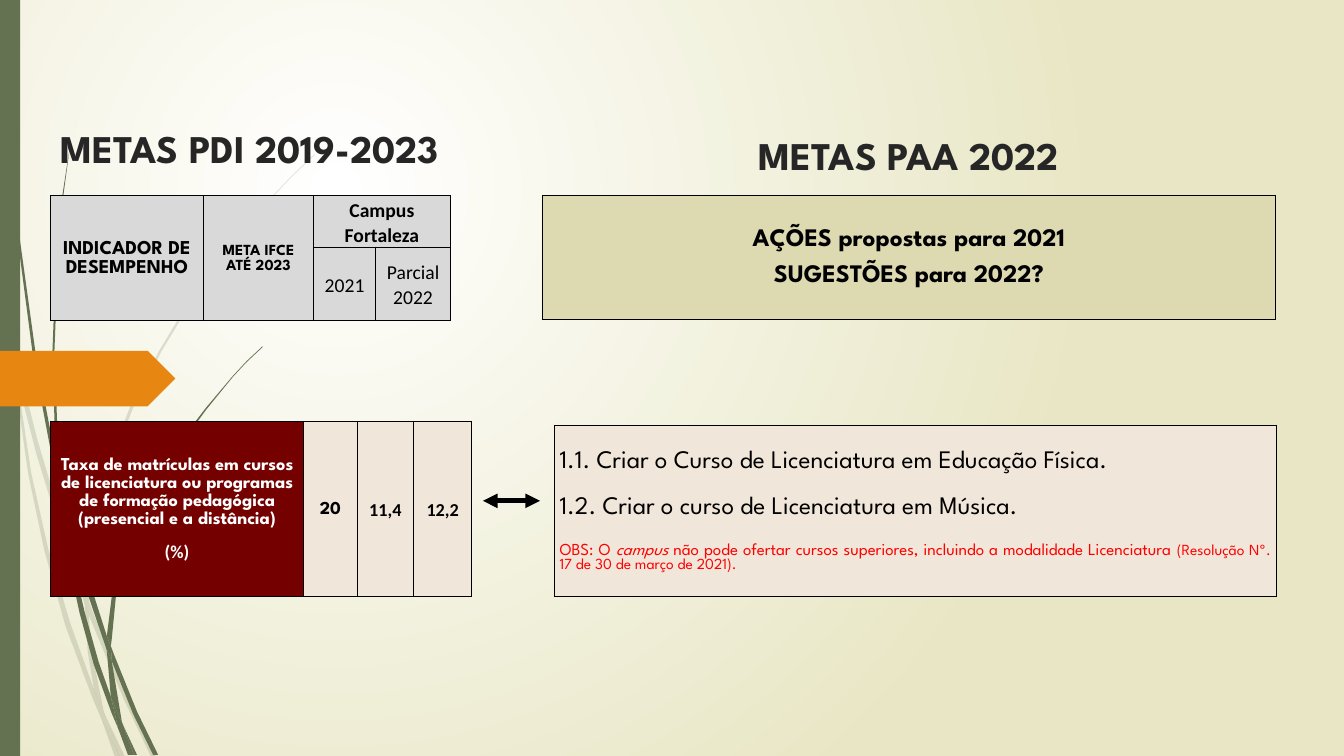
from dataclasses import dataclass

from lxml import etree
from pptx import Presentation
from pptx.dml.color import RGBColor
from pptx.enum.shapes import MSO_CONNECTOR, MSO_SHAPE
from pptx.enum.text import MSO_ANCHOR, PP_ALIGN
from pptx.oxml.ns import qn
from pptx.util import Cm, Pt

MID, LOW = MSO_ANCHOR.MIDDLE, MSO_ANCHOR.BOTTOM
CENTER, JUST = PP_ALIGN.CENTER, PP_ALIGN.JUSTIFY
RECT, ARROW = MSO_SHAPE.RECTANGLE, MSO_SHAPE.PENTAGON
STRAIGHT = MSO_CONNECTOR.STRAIGHT

WHITE = RGBColor(0xFF, 0xFF, 0xFF)
BLACK = RGBColor(0, 0, 0)
CREAM = RGBColor(0xE8, 0xE6, 0xC4)
GREEN = RGBColor(0x64, 0x72, 0x52)
ORANGE = RGBColor(0xE7, 0x87, 0x12)
DARK = RGBColor(0x26, 0x26, 0x26)
KHAKI = RGBColor(0xDD, 0xD9, 0xB0)
GRAY = RGBColor(0xD9, 0xD9, 0xD9)
WINE = RGBColor(0x74, 0, 0)
SAND = RGBColor(0xF0, 0xE7, 0xDA)
RED = RGBColor(0xFF, 0, 0)
SPARTAN, PLAIN = "League Spartan", "Calibri"


@dataclass
class Run:
    text: str
    size: float | None = None
    slant: bool | None = None


@dataclass
class Para:
    runs: list[Run]
    size: float
    font: str = SPARTAN
    bold: bool = True
    color: RGBColor = BLACK
    align: PP_ALIGN = CENTER
    pitch: float = 1.07
    after: float = 0


@dataclass
class Box:
    row: int
    col: int
    fill: RGBColor
    paras: list[Para]
    rows: int = 1
    cols: int = 1


@dataclass
class Grid:
    left: float
    top: float
    cols: list[float]
    rows: list[float]
    boxes: list[Box]


@dataclass
class Title:
    text: str
    left: float
    top: float
    width: float
    height: float
    anchor: MSO_ANCHOR


def line(text: str, size: float, **look) -> Para:
    return Para([Run(text)], size, **look)


# Grass blades: outline points in hundredths of an inch
PALE = [
    [(11, 350), (9, 322), (0, 282), (0, 299), (10, 344)],
    [(58, 522), (84, 599), (85, 586), (62, 520), (37, 436), (14, 345), (17, 376), (36, 450)],
    [(92, 607), (88, 596), (88, 610), (123, 694), (150, 751), (155, 751), (127, 692)],
    [(119, 751), (124, 751), (105, 711)],
    [(93, 683), (70, 619), (48, 545), (31, 469), (17, 376), (11, 350), (28, 470), (44, 546),
     (65, 621), (92, 693), (101, 714), (99, 707)],
    [(84, 599), (87, 646), (93, 683), (96, 692), (105, 711), (103, 706), (91, 646),
     (88, 610), (88, 608)],
    [(88, 584), (94, 522), (110, 462), (132, 405), (160, 349), (192, 296), (229, 245), (268, 198),
     (290, 175), (312, 154), (312, 153), (289, 175), (268, 197), (228, 244), (190, 295),
     (158, 348), (129, 404), (107, 461), (91, 522), (85, 584), (85, 586), (88, 596)],
    [(101, 714), (114, 751), (119, 751)],
    [(88, 608), (88, 610), (88, 596), (85, 586), (84, 599)],
    [(96, 692), (93, 683), (99, 707), (101, 714), (119, 751), (105, 711)],
]
DEEP = [
    [(7, 110), (17, 233), (33, 355), (56, 477), (57, 481), (55, 457), (55, 453), (36, 355),
     (19, 232), (8, 109), (5, 48), (4, 0), (3, 0), (4, 48)],
    [(88, 592), (106, 645), (106, 633), (106, 631), (93, 590), (75, 532), (60, 472), (64, 505),
     (75, 549)],
    [(113, 649), (110, 641), (111, 656), (132, 708), (152, 749), (157, 749), (136, 706)],
    [(110, 691), (98, 657), (84, 607), (72, 556), (64, 505), (57, 477), (68, 557), (79, 608),
     (93, 659), (111, 708), (117, 722), (116, 717)],
    [(60, 472), (58, 453), (54, 349), (58, 245), (63, 193), (70, 141), (62, 193), (56, 245),
     (52, 349), (55, 449)],
    [(133, 749), (136, 749), (122, 719)],
    [(57, 477), (64, 505), (60, 472), (55, 449), (55, 453)],
    [(111, 633), (115, 592), (125, 552), (140, 513), (158, 476), (180, 440), (205, 406), (231, 374),
     (245, 359), (261, 344), (260, 344), (245, 358), (231, 373), (204, 405), (178, 439),
     (156, 474), (137, 512), (122, 551), (111, 591), (106, 631), (110, 641)],
    [(117, 722), (127, 749), (131, 749)],
    [(106, 645), (110, 691), (116, 706), (122, 719), (121, 716), (111, 656), (109, 651)],
    [(106, 645), (109, 651), (111, 656), (110, 641), (106, 631), (106, 633)],
    [(116, 706), (110, 691), (116, 717), (117, 722), (130, 749), (133, 749), (122, 719)],
]

TITLES = [
    Title("METAS PDI 2019-2023", -0.69, 2.46, 13.97, 2.51, MID),
    Title("METAS PAA 2022", 16.28, 2.84, 13.26, 1.78, LOW),
]

GRIDS = [
    Grid(13.67, 4.93, [18.47], [3.12], [
        Box(0, 0, KHAKI, [line("AÇÕES propostas para 2021", 18, after=8),
                          line("SUGESTÕES para 2022?", 18, after=8)])]),
    Grid(1.27, 4.93, [3.86, 2.77, 1.57, 1.88], [1.24, 1.85], [
        Box(0, 0, GRAY, [line("INDICADOR DE DESEMPENHO", 14, after=8)], rows=2),
        Box(0, 1, GRAY, [line("META IFCE", 11), line("ATÉ 2023", 11)], rows=2),
        Box(0, 2, GRAY, [line("Campus Fortaleza", 14, font=PLAIN)], cols=2),
        Box(1, 2, GRAY, [line("2021", 14, font=PLAIN, bold=False)]),
        Box(1, 3, GRAY, [line("Parcial 2022", 14, font=PLAIN, bold=False)])]),
    Grid(1.27, 10.62, [6.38, 1.35, 1.42, 1.47], [4.42], [
        Box(0, 0, WINE, [
            line("Taxa de matrículas em cursos de licenciatura ou programas de formação "
                 "pedagógica (presencial e a distância)", 13, color=WHITE, after=8),
            line("(%)", 13, font=PLAIN, color=WHITE, after=8)]),
        Box(0, 1, SAND, [line("20", 13, after=8)]),
        Box(0, 2, SAND, [line("11,4", 13, font=PLAIN, after=8)]),
        Box(0, 3, SAND, [line("12,2", 13, font=PLAIN, after=8)])]),
    Grid(13.97, 10.72, [18.19], [4.32], [
        Box(0, 0, SAND, [
            *(line(text, 18, bold=False, align=JUST, pitch=1, after=16.5) for text in (
                "1.1. Criar o Curso de Licenciatura em Educação Física.",
                "1.2. Criar o curso de Licenciatura em Música.")),
            Para([Run("OBS: O "), Run("campus", slant=True),
                  Run(" não pode ofertar cursos superiores, incluindo a modalidade Licenciatura "),
                  Run("(Resolução Nº. 17 de 30 de março de 2021).", 11)],
                 12, bold=False, color=RED, align=JUST, pitch=1)])]),
]


def paint(shape, color: RGBColor) -> None:
    shape.shadow.inherit = False
    shape.fill.solid()
    shape.fill.fore_color.rgb = color
    shape.line.fill.background()


def write(frame, paras: list[Para]) -> None:
    frame.word_wrap = True
    for i, para in enumerate(paras):
        p = frame.add_paragraph() if i else frame.paragraphs[0]
        p.alignment, p.line_spacing = para.align, para.pitch
        p.space_before, p.space_after = Pt(0), Pt(para.after)
        p.font.size, p.font.name, p.font.bold = Pt(para.size), para.font, para.bold
        p.font.color.rgb = para.color
        for part in para.runs:
            run = p.add_run()
            run.text = part.text
            if part.size:
                run.font.size = Pt(part.size)
            run.font.italic = part.slant


def edge(cell) -> None:
    props = cell._tc.get_or_add_tcPr()
    for i, side in enumerate(("lnL", "lnR", "lnT", "lnB")):
        rule = etree.Element(qn(f"a:{side}"), w=str(Pt(1)))
        fill = etree.SubElement(rule, qn("a:solidFill"))
        etree.SubElement(fill, qn("a:srgbClr"), val=str(BLACK))
        props.insert(i, rule)


def draw_grid(slide, grid: Grid) -> None:
    table = slide.shapes.add_table(
        len(grid.rows), len(grid.cols), Cm(grid.left), Cm(grid.top),
        Cm(sum(grid.cols)), Cm(sum(grid.rows))).table
    table.first_row = table.horz_banding = False
    for col, width in zip(table.columns, grid.cols):
        col.width = Cm(width)
    for row, height in zip(table.rows, grid.rows):
        row.height = Cm(height)
    for box in grid.boxes:
        cell = table.cell(box.row, box.col)
        if box.rows * box.cols > 1:
            cell.merge(table.cell(box.row + box.rows - 1, box.col + box.cols - 1))
        cell.vertical_anchor = MID
        cell.margin_left = cell.margin_right = Cm(0.13)
        cell.margin_top, cell.margin_bottom = Cm(0.03), Cm(0)
        write(cell.text_frame, box.paras)
        for r in range(box.row, box.row + box.rows):
            for c in range(box.col, box.col + box.cols):
                part = table.cell(r, c)
                part.fill.solid()
                part.fill.fore_color.rgb = box.fill
                edge(part)


def draw_grass(slide, blades: list, alpha: int) -> None:
    group = slide.shapes.add_group_shape()
    for start, *rest in blades:
        pen = group.shapes.build_freeform(*start, scale=Cm(0.0254))
        pen.add_line_segments(rest, close=True)
        blade = pen.convert_to_shape()
        paint(blade, GREEN)
        if alpha < 100:
            tone = blade._element.spPr.find(f"{qn('a:solidFill')}/{qn('a:srgbClr')}")
            etree.SubElement(tone, qn("a:alpha"), val=str(alpha * 1000))


def draw_back(slide) -> None:
    fill = slide.background.fill
    fill.gradient()
    for stop, color in zip(fill.gradient_stops, (WHITE, CREAM)):
        stop.color.rgb = color
    lin = slide.element.find(f".//{qn('a:lin')}")
    glow = etree.Element(qn("a:path"), {"path": "circle"})
    etree.SubElement(glow, qn("a:fillToRect"), l="50000", t="50000", r="100000", b="100000")
    lin.getparent().replace(lin, glow)


def draw_link(slide) -> None:
    link = slide.shapes.add_connector(STRAIGHT, Cm(12.17), Cm(12.62), Cm(13.61), Cm(12.62))
    link.line.width = Pt(3.5)
    link.line.color.rgb = BLACK
    rule = link.line._get_or_add_ln()
    for end in ("headEnd", "tailEnd"):
        etree.SubElement(rule, qn(f"a:{end}"), type="triangle")
    etree.SubElement(link._element.spPr, qn("a:effectLst"))


def main() -> None:
    deck = Presentation()
    deck.slide_width, deck.slide_height = Cm(33.87), Cm(19.05)
    slide = deck.slides.add_slide(deck.slide_layouts[6])

    # Backdrop
    draw_back(slide)
    draw_grass(slide, PALE, 20)
    draw_grass(slide, DEEP, 100)
    paint(slide.shapes.add_shape(RECT, 0, 0, Cm(0.51), deck.slide_height), GREEN)
    paint(slide.shapes.add_shape(ARROW, 0, Cm(8.84), Cm(4.42), Cm(1.4)), ORANGE)

    # Titles, tables and the arrow between them
    for title in TITLES:
        frame = slide.shapes.add_textbox(
            Cm(title.left), Cm(title.top), Cm(title.width), Cm(title.height)).text_frame
        frame.vertical_anchor = title.anchor
        write(frame, [line(title.text, 28, color=DARK, pitch=1)])
    for grid in GRIDS:
        draw_grid(slide, grid)
    draw_link(slide)
    deck.save("out.pptx")


if __name__ == "__main__":
    main()
